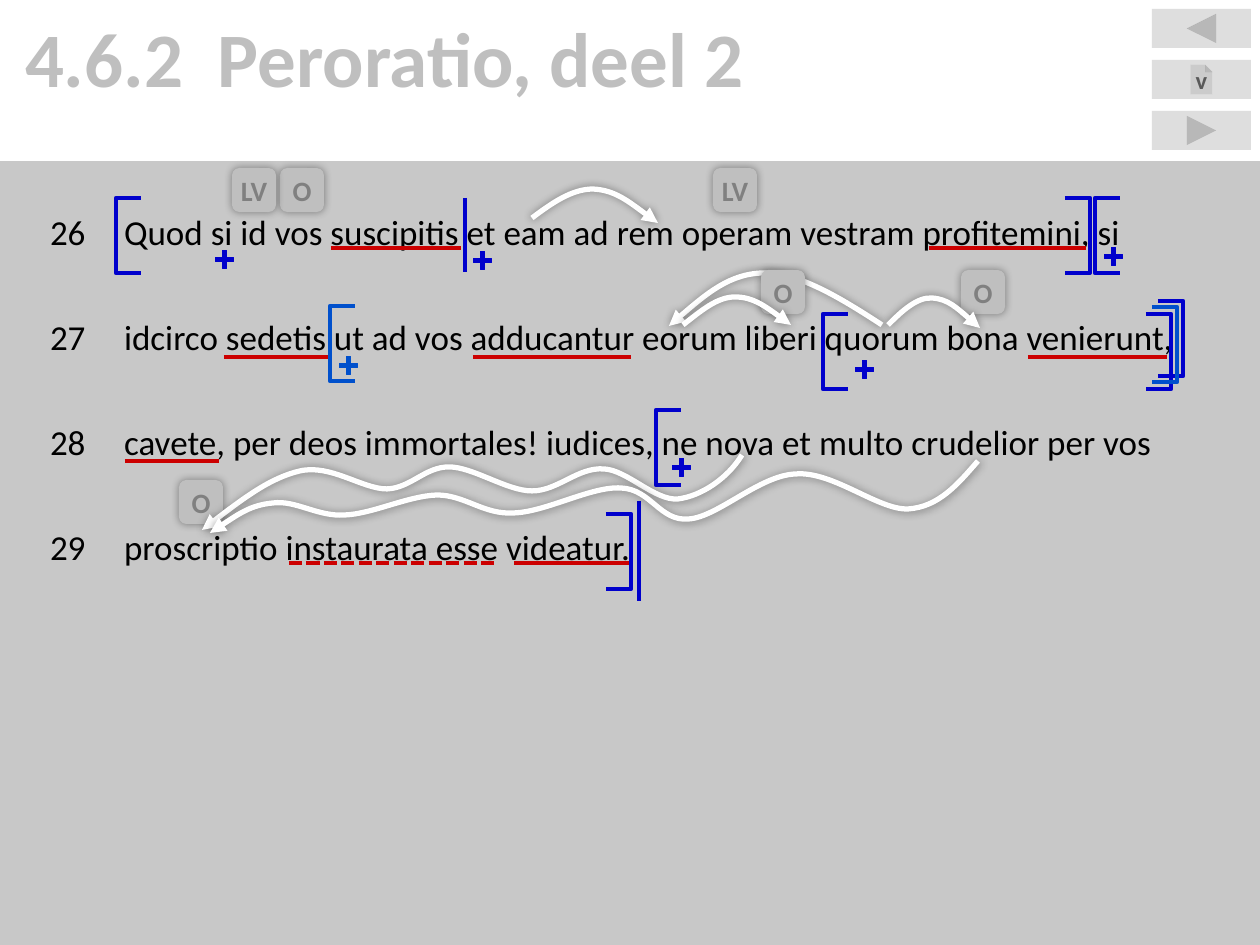
from dataclasses import dataclass

from lxml.etree import SubElement
from pptx import Presentation
from pptx.dml.color import RGBColor
from pptx.enum.dml import MSO_LINE
from pptx.enum.shapes import MSO_CONNECTOR, MSO_SHAPE
from pptx.enum.text import MSO_ANCHOR, MSO_AUTO_SIZE, PP_ALIGN
from pptx.oxml.ns import qn
from pptx.util import Emu, Pt

EMU_PER_PX = 914400 / 126


def px(length):
    return Emu(round(length * EMU_PER_PX))


@dataclass(frozen=True)
class Theme:
    font: str = "Calibri"
    panel: str = "BFBFBF"
    ink: str = "000000"
    button_text: str = "595959"
    tag_text: str = "808080"
    verb: str = "CC0000"
    clause: str = "0000CC"
    subclause: str = "0050CC"
    arrow: str = "FFFFFF"
    title_size: int = 44
    body_size: int = 20
    tag_size: int = 16
    button_size: int = 14
    mark_width: float = 2.5
    arrow_width: float = 3


def write_text(frame, lines, *, font, size, color, bold=False, align=PP_ALIGN.LEFT,
               anchor=MSO_ANCHOR.TOP, insets=(0, 0, 0, 0), space_after=0, hanging=0):
    """Fill a text frame, one paragraph per line; insets are left, top, right, bottom.

    With a hanging indent, a tab in the first line moves to the indent.
    """
    frame.word_wrap = True
    frame.auto_size = MSO_AUTO_SIZE.NONE
    frame.vertical_anchor = anchor
    (frame.margin_left, frame.margin_top,
     frame.margin_right, frame.margin_bottom) = map(px, insets)
    for index, line in enumerate(lines):
        paragraph = frame.add_paragraph() if index else frame.paragraphs[0]
        properties = paragraph._p.get_or_add_pPr()
        properties.set("marL", str(px(hanging)))
        properties.set("indent", str(px(-hanging)))
        SubElement(properties, qn("a:buNone"))
        paragraph.alignment = align
        paragraph.space_before = Pt(0)
        paragraph.space_after = Pt(space_after)
        run = paragraph.add_run()
        run.text = line
        run.font.name = font
        run.font.size = Pt(size)
        run.font.bold = bold
        run.font.color.rgb = RGBColor.from_string(color)


def fill_shape(shape, color, opacity=100):
    shape.fill.solid()
    shape.fill.fore_color.rgb = RGBColor.from_string(color)
    if opacity < 100:
        color_element = shape._element.spPr.find(qn("a:solidFill"))[0]
        SubElement(color_element, qn("a:alpha"), val=str(opacity * 1000))


def draw_line(shape, color, width):
    shape.line.color.rgb = RGBColor.from_string(color)
    shape.line.width = Pt(width)


def add_glow_shadow(shape):
    shape.shadow.inherit = False
    effects = shape._element.spPr.find(qn("a:effectLst"))
    shadow = SubElement(effects, qn("a:outerShdw"), blurRad=str(Pt(5)), dist="0", dir="0")
    color = SubElement(shadow, qn("a:srgbClr"), val="000000")
    SubElement(color, qn("a:alpha"), val="40000")


class AnnotatedSlide:
    def __init__(self, presentation, theme):
        self.theme = theme
        self.slide = presentation.slides.add_slide(presentation.slide_layouts[1])
        self.shapes = self.slide.shapes

    def place(self, shape, left, top, width, height):
        shape.left, shape.top, shape.width, shape.height = map(px, (left, top, width, height))

    def title(self, text):
        shape = self.shapes.title
        self.place(shape, 0, 0, 1260, 161)
        write_text(shape.text_frame, [text], font=self.theme.font, size=self.theme.title_size,
                   color=self.theme.panel, bold=True, insets=(25, 10, 25, 10))

    def body(self, lines):
        shape = self.slide.placeholders[1]
        self.place(shape, 0, 161, 1260, 784)
        fill_shape(shape, self.theme.panel, 85)
        write_text(shape.text_frame, lines, font=self.theme.font, size=self.theme.body_size,
                   color=self.theme.ink, insets=(50, 49, 49, 49), space_after=36, hanging=74)

    def preset(self, kind, left, top, width, height):
        shape = self.shapes.add_shape(kind, *map(px, (left, top, width, height)))
        shape.shadow.inherit = False
        shape.line.fill.background()
        return shape

    def label(self, shape, text, size, color):
        write_text(shape.text_frame, [text], font=self.theme.font, size=size, color=color,
                   bold=True, align=PP_ALIGN.CENTER, anchor=MSO_ANCHOR.MIDDLE)

    def button(self, kind, top, text=None):
        shape = self.preset(kind, 1152, top, 99, 39)
        fill_shape(shape, self.theme.panel, 50)
        if text:
            self.label(shape, text, self.theme.button_size, self.theme.button_text)

    def tag(self, text, left, top):
        shape = self.preset(MSO_SHAPE.ROUNDED_RECTANGLE, left, top, 44, 44)
        fill_shape(shape, self.theme.panel)
        add_glow_shadow(shape)
        self.label(shape, text, self.theme.tag_size, self.theme.tag_text)

    def plus(self, left, top, color):
        shape = self.preset(MSO_SHAPE.MATH_PLUS, left, top, 25, 25)
        shape.adjustments[0] = 0.17
        fill_shape(shape, color)
        draw_line(shape, color, 0)

    def line(self, start, end, color, dashed=False):
        connector = self.shapes.add_connector(MSO_CONNECTOR.STRAIGHT, *map(px, start + end))
        SubElement(connector._element.spPr, qn("a:effectLst"))
        draw_line(connector, color, self.theme.mark_width)
        if dashed:
            connector.line.dash_style = MSO_LINE.SQUARE_DOT

    def outline(self, points, color, width):
        builder = self.shapes.build_freeform(*points[0], scale=EMU_PER_PX)
        builder.add_line_segments(points[1:], close=False)
        shape = builder.convert_to_shape()
        shape.shadow.inherit = False
        shape.fill.background()
        draw_line(shape, color, width)
        return shape

    def bracket(self, spine, top, arm, color):
        tip, bottom = spine + arm, top + 75
        points = [(tip, top), (spine, top), (spine, bottom), (tip, bottom)]
        self.outline(points, color, self.theme.mark_width)

    def curved_arrow(self, points):
        """Draw a start point followed by triples of Bezier points."""
        shape = self.outline(points, self.theme.arrow, self.theme.arrow_width)
        route = shape._element.spPr.find(".//" + qn("a:path"))
        segments = route.findall(qn("a:lnTo"))
        for first in range(0, len(segments), 3):
            curve = SubElement(route, qn("a:cubicBezTo"))
            for segment in segments[first:first + 3]:
                curve.append(segment[0])
                route.remove(segment)
        SubElement(shape.line._get_or_add_ln(), qn("a:tailEnd"), type="triangle")
        add_glow_shadow(shape)


def main():
    theme = Theme()
    presentation = Presentation()
    presentation.slide_width, presentation.slide_height = px(1260), px(945)
    page = AnnotatedSlide(presentation, theme)

    # Title, Latin text and navigation
    page.title("4.6.2  Peroratio, deel 2")
    page.body(["26\tQuod si id vos suscipitis et eam ad rem operam vestram profitemini, si",
               "27\tidcirco sedetis ut ad vos adducantur eorum liberi quorum bona venierunt,",
               "28\tcavete, per deos immortales! iudices, ne nova et multo crudelior per vos",
               "29\tproscriptio instaurata esse videatur."])
    buttons = [(MSO_SHAPE.ACTION_BUTTON_BACK_OR_PREVIOUS, None),
               (MSO_SHAPE.ACTION_BUTTON_DOCUMENT, "v"),
               (MSO_SHAPE.ACTION_BUTTON_FORWARD_OR_NEXT, None)]
    for row, (kind, text) in enumerate(buttons):
        page.button(kind, 9 + 51 * row, text)

    # Verb underlines and clause bars
    for left, right, y in [(331, 461, 248), (929, 1086, 248), (224, 328, 357), (473, 631, 357),
                           (1028, 1167, 357), (125, 219, 461), (514, 630, 563)]:
        page.line((left, y), (right, y), theme.verb)
    page.line((289, 563), (495, 563), theme.verb, dashed=True)
    for x, top, bottom in [(465, 198, 272), (639, 501, 601)]:
        page.line((x, top), (x, bottom), theme.clause)

    # Clause brackets and conjunction marks
    for color, brackets, pluses in [
        (theme.clause,
         [(116, 198, 25), (1090, 198, -25), (1095, 198, 25), (1183, 301, -25), (823, 314, 25),
          (1171, 314, -25), (656, 410, 25), (631, 514, -25)],
         [(212, 247), (470, 248), (1101, 244), (852, 357), (669, 455)]),
        (theme.subclause, [(330, 306, 25), (1177, 307, -25)], [(336, 353)]),
    ]:
        for spine, top, arm in brackets:
            page.bracket(spine, top, arm, color)
        for left, top in pluses:
            page.plus(left, top, color)

    # Long arrow behind the tags, then the tags
    page.curved_arrow([(882, 325), (842, 299), (800, 273), (765, 273),
                       (730, 273), (699, 300), (669, 326)])
    for text, left, top in [("O", 280, 168), ("LV", 232, 168), ("LV", 713, 168),
                            ("O", 961, 270), ("O", 179, 480), ("O", 761, 270)]:
        page.tag(text, left, top)

    # Arrows in front of the tags
    for points in [
        [(532, 218), (552, 203), (572, 189), (593, 189), (615, 190), (636, 207), (658, 223)],
        [(888, 325), (902, 311), (917, 297), (932, 298), (948, 299), (964, 314), (980, 328)],
        [(683, 325), (701, 311), (717, 297), (735, 297), (753, 297), (772, 311), (791, 325)],
        [(742, 455), (728, 478), (702, 496), (678, 499), (655, 501), (627, 470), (604, 469),
         (578, 467), (558, 491), (532, 491), (507, 491), (473, 467), (449, 467), (425, 467),
         (411, 488), (387, 489), (362, 489), (331, 464), (300, 471), (270, 478), (236, 504),
         (202, 530)],
        [(978, 461), (958, 484), (939, 507), (908, 509), (878, 510), (833, 471), (796, 474),
         (760, 475), (718, 517), (689, 519), (660, 522), (651, 489), (621, 488), (592, 486),
         (546, 512), (514, 513), (484, 515), (465, 495), (437, 495), (408, 496), (372, 514),
         (345, 515), (318, 517), (296, 500), (273, 503), (251, 505), (231, 519), (210, 533)],
    ]:
        page.curved_arrow(points)

    presentation.save("out.pptx")


if __name__ == "__main__":
    main()
